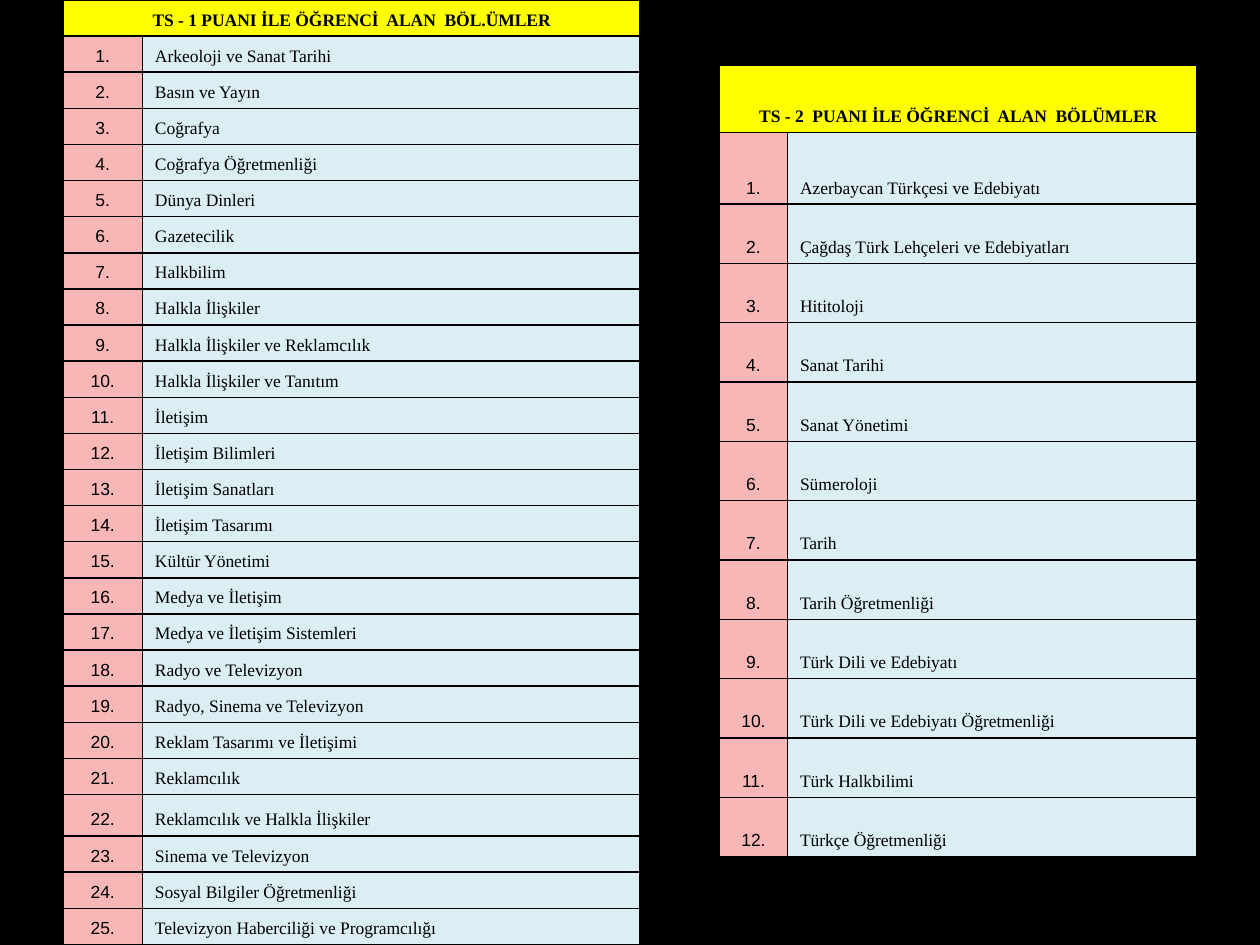
"""Builds a slide with two numbered tables of university departments by score type."""
from lxml import etree
from pptx import Presentation
from pptx import util as u
from pptx.dml import color
from pptx.enum import text
from pptx.oxml import ns

TS1_DEPARTMENTS = [
    "Arkeoloji ve Sanat Tarihi", "Basın ve Yayın", "Coğrafya",
    "Coğrafya Öğretmenliği", "Dünya Dinleri", "Gazetecilik", "Halkbilim",
    "Halkla İlişkiler", "Halkla İlişkiler ve Reklamcılık",
    "Halkla İlişkiler ve Tanıtım", "İletişim", "İletişim Bilimleri",
    "İletişim Sanatları", "İletişim Tasarımı", "Kültür Yönetimi",
    "Medya ve İletişim", "Medya ve İletişim Sistemleri",
    "Radyo ve Televizyon", "Radyo, Sinema ve Televizyon",
    "Reklam Tasarımı ve İletişimi", "Reklamcılık",
    "Reklamcılık ve Halkla İlişkiler", "Sinema ve Televizyon",
    "Sosyal Bilgiler Öğretmenliği", "Televizyon Haberciliği ve Programcılığı",
]
TS2_DEPARTMENTS = [
    "Azerbaycan Türkçesi ve Edebiyatı",
    "Çağdaş Türk Lehçeleri ve Edebiyatları", "Hititoloji", "Sanat Tarihi",
    "Sanat Yönetimi", "Sümeroloji", "Tarih", "Tarih Öğretmenliği",
    "Türk Dili ve Edebiyatı", "Türk Dili ve Edebiyatı Öğretmenliği",
    "Türk Halkbilimi", "Türkçe Öğretmenliği",
]


def rgb(value):
    return color.RGBColor.from_string(value)


def write(cell, content, font="Times New Roman", size=10, ink="000000",
          bold=False, align=text.PP_ALIGN.LEFT):
    cell.vertical_anchor = text.MSO_ANCHOR.BOTTOM
    paragraph = cell.text_frame.paragraphs[0]
    paragraph.alignment = align
    run = paragraph.add_run()
    run.text = content
    run.font.name = font
    run.font.size = u.Pt(size)
    run.font.bold = bold
    run.font.color.rgb = rgb(ink)


class DepartmentSlide:
    header_fill = "FFFF00"
    number_fill = "F8B7B7"
    name_fill = "DBEEF4"
    border_color = "000000"
    border_width = 1

    def __init__(self, presentation, background):
        self.slide = presentation.slides.add_slide(presentation.slide_layouts[6])
        fill = self.slide.background.fill
        fill.solid()
        fill.fore_color.rgb = rgb(background)

    def paint(self, cell, fill):
        cell.fill.solid()
        cell.fill.fore_color.rgb = rgb(fill)
        properties = cell._tc.get_or_add_tcPr()
        for position, side in enumerate(("lnL", "lnR", "lnT", "lnB")):
            line = etree.Element(ns.qn(f"a:{side}"), w=str(u.Pt(self.border_width)))
            solid = etree.SubElement(line, ns.qn("a:solidFill"))
            etree.SubElement(solid, ns.qn("a:srgbClr"), val=self.border_color)
            properties.insert(position, line)

    def department_table(self, title, departments, left, top, widths, height,
                         special_heights):
        row_count = len(departments) + 1
        frame = self.slide.shapes.add_table(
            row_count, 2, u.Inches(left), u.Inches(top),
            u.Inches(sum(widths)), u.Inches(height))
        table = frame.table
        table.first_row = table.horz_banding = False
        for column, width in zip(table.columns, widths):
            column.width = u.Inches(width)

        regular_height = ((height - sum(special_heights.values()))
                          / (row_count - len(special_heights)))
        for index, row in enumerate(table.rows):
            row.height = u.Inches(special_heights.get(index, regular_height))

        header = table.cell(0, 0)
        header.merge(table.cell(0, 1))
        for cell in table.rows[0].cells:
            self.paint(cell, self.header_fill)
        write(header, title, bold=True, align=text.PP_ALIGN.CENTER)

        for number, department in enumerate(departments, start=1):
            number_cell, name_cell = table.rows[number].cells
            self.paint(number_cell, self.number_fill)
            write(number_cell, f"{number}.", font="Arial", align=text.PP_ALIGN.CENTER)
            self.paint(name_cell, self.name_fill)
            write(name_cell, department)


def main():
    presentation = Presentation()
    presentation.slide_width = u.Inches(10)
    presentation.slide_height = u.Inches(7.5)
    page = DepartmentSlide(presentation, background="000000")
    page.department_table(
        "TS - 1 PUANI İLE ÖĞRENCİ  ALAN  BÖL.ÜMLER", TS1_DEPARTMENTS,
        left=0.5, top=0, widths=(0.63, 3.95), height=7.5,
        special_heights={22: 0.33})
    page.department_table(
        "TS - 2  PUANI İLE ÖĞRENCİ  ALAN  BÖLÜMLER", TS2_DEPARTMENTS,
        left=5.71, top=0.52, widths=(0.54, 3.25), height=6.28,
        special_heights={0: 0.53, 1: 0.57})
    presentation.save("out.pptx")


if __name__ == "__main__":
    main()
